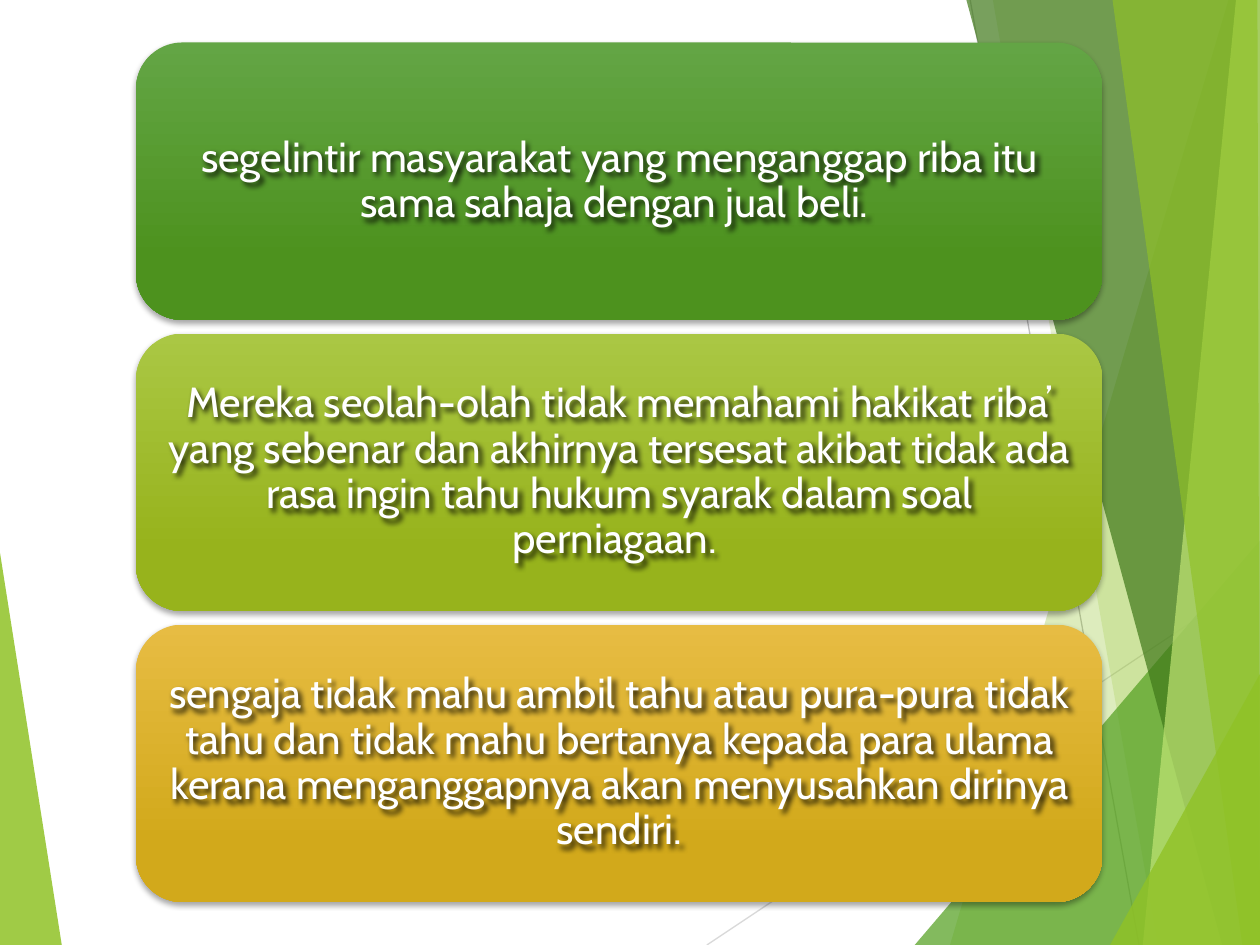
from dataclasses import dataclass

from lxml import etree
from pptx import Presentation
from pptx.dml.color import RGBColor
from pptx.enum.shapes import MSO_CONNECTOR, MSO_SHAPE
from pptx.enum.text import MSO_ANCHOR, PP_ALIGN
from pptx.oxml.ns import qn
from pptx.util import Emu, Inches, Pt

STRAIGHT = MSO_CONNECTOR.STRAIGHT
ROUNDED = MSO_SHAPE.ROUNDED_RECTANGLE
MIDDLE = MSO_ANCHOR.MIDDLE
CENTER = PP_ALIGN.CENTER

SLIDE_WIDTH, SLIDE_HEIGHT = Inches(10), Inches(7.5)
BLANK_LAYOUT = 6
CARD_LEFT, CARD_TOP = 10.8, 4.5
CARD_WIDTH, CARD_HEIGHT, CARD_PITCH = 76.7, 29.35, 30.8
TEXT_INSET = Inches(0.11)


@dataclass(frozen=True)
class Facet:
    points: tuple[tuple[float, float], ...]
    color: str
    opacity: int


@dataclass(frozen=True)
class Ray:
    start: tuple[float, float]
    end: tuple[float, float]
    color: str


@dataclass(frozen=True)
class Card:
    text: str
    top_color: str
    bottom_color: str


LEFT_FACET = Facet(((0, 58.5), (4.9, 100), (0, 100)), "90C226", 85)
RAYS = (
    Ray((56.1, 100), (100, 61), "D9D9D9"),
    Ray((77, 0), (90.4, 100), "BFBFBF"),
)
RIGHT_FACETS = (
    Facet(((97.5, 0), (75.4, 100), (100, 100), (100, 0)), "90C226", 30),
    Facet(((78.8, 0), (91.9, 100), (100, 100), (100, 0)), "90C226", 20),
    Facet(((72.6, 100), (100, 57.2), (100, 100)), "54A021", 72),
    Facet(((76.7, 0), (97, 100), (100, 100), (100, 0)), "3F7819", 70),
    Facet(((98.1, 0), (90.7, 100), (100, 100), (100, 0)), "C0E474", 70),
    Facet(((88.3, 0), (98.6, 100), (100, 100), (99.8, 0)), "90C226", 65),
    Facet(((88.1, 100), (100, 71.3), (100, 100)), "90C226", 80),
)
CARDS = (
    Card("segelintir masyarakat yang menganggap riba itu sama sahaja dengan jual beli. ",
         "63A545", "4D921E"),
    Card("Mereka seolah-olah tidak memahami hakikat riba’ yang sebenar dan akhirnya "
         "tersesat akibat tidak ada rasa ingin tahu hukum syarak dalam soal perniagaan. ",
         "AAC744", "97B31C"),
    Card("sengaja tidak mahu ambil tahu atau pura-pura tidak tahu dan tidak mahu bertanya "
         "kepada para ulama kerana menganggapnya akan menyusahkan dirinya sendiri.",
         "E7BC43", "D2A91B"),
)


def across(share: float) -> Emu:
    return Emu(round(SLIDE_WIDTH * share / 100))


def down(share: float) -> Emu:
    return Emu(round(SLIDE_HEIGHT * share / 100))


def set_color(color_format, color: str) -> None:
    color_format.rgb = RGBColor.from_string(color)


def add_shadow(shape, blur: float, distance: float, angle: int, opacity: int) -> None:
    shape.shadow.inherit = False
    effects = shape._element.spPr.find(qn("a:effectLst"))
    shadow = etree.SubElement(
        effects, qn("a:outerShdw"), blurRad=str(Pt(blur)), dist=str(Pt(distance)),
        dir=str(angle * 60000), algn="ctr", rotWithShape="0")
    color = etree.SubElement(shadow, qn("a:srgbClr"), val="000000")
    etree.SubElement(color, qn("a:alpha"), val=str(opacity * 1000))


def add_facet(slide, facet: Facet) -> None:
    corners = [(across(x), down(y)) for x, y in facet.points]
    builder = slide.shapes.build_freeform(*corners[0])
    builder.add_line_segments(corners[1:], close=True)
    shape = builder.convert_to_shape()
    shape.shadow.inherit = False
    shape.line.fill.background()
    shape.fill.solid()
    set_color(shape.fill.fore_color, facet.color)
    color = shape._element.spPr.find(qn("a:solidFill"))[0]
    etree.SubElement(color, qn("a:alpha"), val=str(facet.opacity * 1000))


def add_ray(slide, ray: Ray) -> None:
    (start_x, start_y), (end_x, end_y) = ray.start, ray.end
    connector = slide.shapes.add_connector(
        STRAIGHT, across(start_x), down(start_y), across(end_x), down(end_y))
    set_color(connector.line.color, ray.color)
    connector.line.width = Pt(0.75)
    etree.SubElement(connector._element.spPr, qn("a:effectLst"))


def write_text(shape, text: str, *, font: str, size: float, color: str) -> None:
    frame = shape.text_frame
    frame.word_wrap = True
    frame.vertical_anchor = MIDDLE
    paragraph = frame.paragraphs[0]
    paragraph.alignment = CENTER
    paragraph.line_spacing = 0.9
    run = paragraph.add_run()
    run.text = text
    run.font.name = font
    run.font.size = Pt(size)
    set_color(run.font.color, color)


def add_card(slide, card: Card, row: int) -> None:
    left, top = across(CARD_LEFT), down(CARD_TOP + row * CARD_PITCH)
    width, height = across(CARD_WIDTH), down(CARD_HEIGHT)
    panel = slide.shapes.add_shape(ROUNDED, left, top, width, height)
    panel.line.fill.background()
    panel.fill.gradient()
    panel.fill.gradient_angle = 270
    stops = zip(panel.fill.gradient_stops, (0, 0.78), (card.top_color, card.bottom_color))
    for stop, position, color in stops:
        stop.position = position
        set_color(stop.color, color)
    add_shadow(panel, blur=3, distance=2, angle=90, opacity=35)

    label = slide.shapes.add_textbox(
        left + TEXT_INSET, top + TEXT_INSET, width - 2 * TEXT_INSET, height - 2 * TEXT_INSET)
    label.fill.background()
    add_shadow(label, blur=3, distance=2.5, angle=45, opacity=80)
    write_text(label, card.text, font="Cabin", size=24, color="FFFFFF")


def main() -> None:
    presentation = Presentation()
    presentation.slide_width, presentation.slide_height = SLIDE_WIDTH, SLIDE_HEIGHT
    slide = presentation.slides.add_slide(presentation.slide_layouts[BLANK_LAYOUT])
    add_facet(slide, LEFT_FACET)
    for ray in RAYS:
        add_ray(slide, ray)
    for facet in RIGHT_FACETS:
        add_facet(slide, facet)
    for row, card in enumerate(CARDS):
        add_card(slide, card, row)
    presentation.save("out.pptx")


if __name__ == "__main__":
    main()
